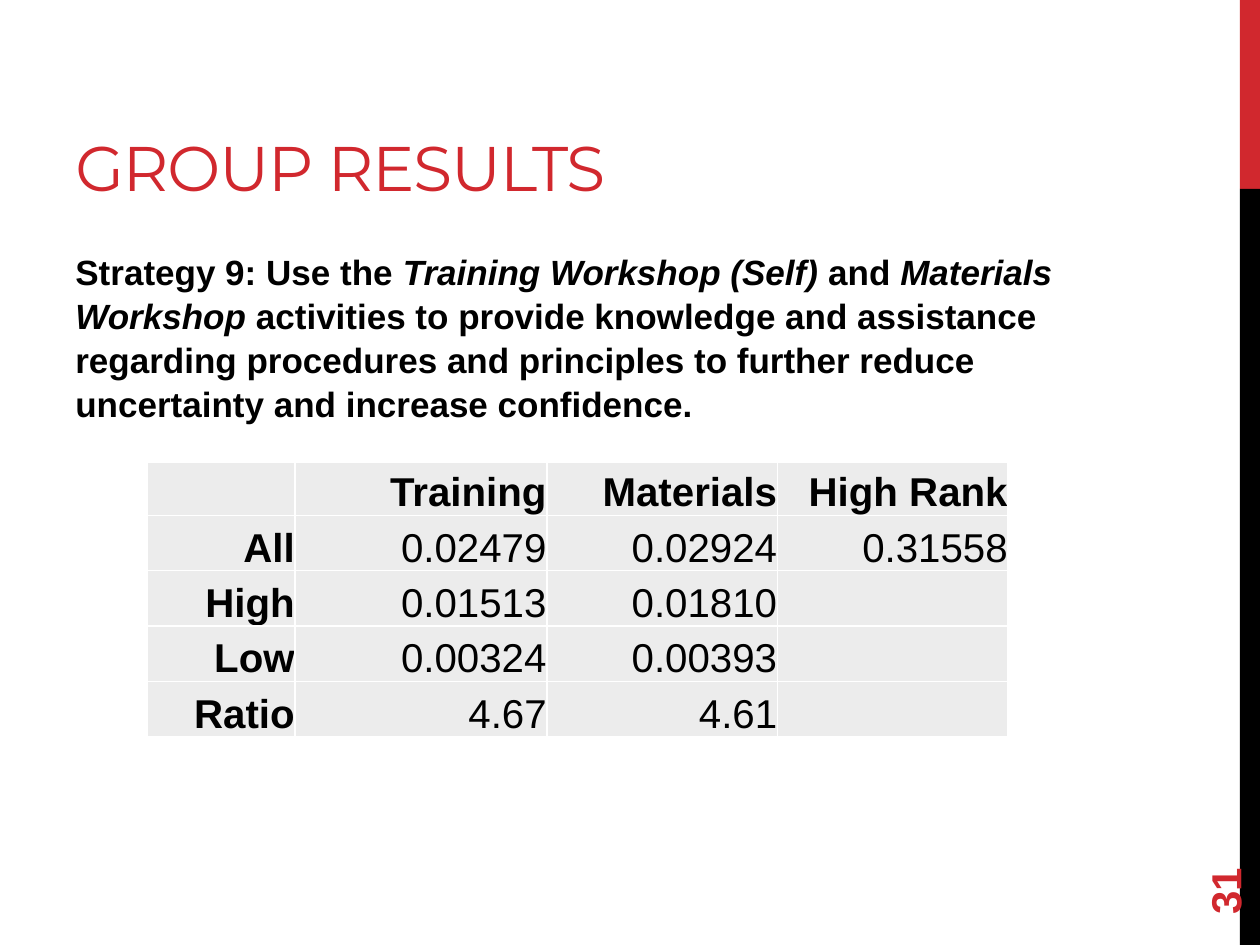
"""Build the group results slide for Strategy 9."""
from lxml import etree
from pptx import Presentation
from pptx.dml.color import RGBColor
from pptx.enum import shapes, text
from pptx.oxml.ns import qn
from pptx.util import Inches, Pt

RED, BLACK, WHITE, GRAY = "D1282E", "000000", "FFFFFF", "ECECEC"


def color(hex_value):
    return RGBColor.from_string(hex_value)


def add_run(paragraph, words, size, ink, font="Arial", bold=False, italic=False):
    run = paragraph.add_run()
    run.text = words
    run.font.name, run.font.size = font, Pt(size)
    run.font.bold, run.font.italic = bold, italic
    run.font.color.rgb = color(ink)
    return run


deck = Presentation()
deck.slide_width, deck.slide_height = Inches(10), Inches(7.5)
slide = deck.slides.add_slide(deck.slide_layouts[6])

for top, height, fill in [(0, 1.5, RED), (1.5, 6, BLACK)]:
    band = slide.shapes.add_shape(
        shapes.MSO_SHAPE.RECTANGLE, Inches(9.84), Inches(top), Inches(0.16), Inches(height))
    band.shadow.inherit = False
    band.fill.solid()
    band.fill.fore_color.rgb = color(fill)
    band.line.fill.background()

frames = []
for left, top, width, height, anchor, angle in [
    (0.5, 0.17, 6.83, 1.5, text.MSO_ANCHOR.BOTTOM, 0),
    (9, 6.44, 1.44, 0.4, text.MSO_ANCHOR.MIDDLE, 270),
    (0.5, 1.92, 8.33, 4.92, text.MSO_ANCHOR.TOP, 0),
]:
    box = slide.shapes.add_textbox(Inches(left), Inches(top), Inches(width), Inches(height))
    box.rotation = angle
    box.text_frame.word_wrap = True
    box.text_frame.vertical_anchor = anchor
    frames.append(box.text_frame)
title, page_number, strategy = [frame.paragraphs[0] for frame in frames]

heading = add_run(title, "GROUP RESULTS", 36, RED, font="Montserrat")
heading.font._element.set("spc", "-60")
add_run(page_number, "31", 24, RED, bold=True)

strategy.line_spacing = 1.05
strategy.space_after = Pt(6)
for words, italic in [
    ("Strategy 9: Use the ", False),
    ("Training Workshop (Self) ", True),
    ("and ", False),
    ("Materials Workshop ", True),
    ("activities to provide knowledge and assistance regarding procedures and "
     "principles to further reduce uncertainty and increase confidence.", False),
]:
    add_run(strategy, words, 20, BLACK, bold=True, italic=italic)

results = [
    ["", "Training", "Materials", "High Rank"],
    ["All", "0.02479", "0.02924", "0.31558"],
    ["High", "0.01513", "0.01810", ""],
    ["Low", "0.00324", "0.00393", ""],
    ["Ratio", "4.67", "4.61", ""],
]
table = slide.shapes.add_table(
    5, 4, Inches(1.17), Inches(3.67), Inches(6.83), Inches(2.18)).table
for column, width in zip(table.columns, [1.17, 2, 1.83, 1.83]):
    column.width = Inches(width)
for row, height in zip(table.rows, [0.42] + [0.44] * 4):
    row.height = Inches(height)

for r, values in enumerate(results):
    for c, value in enumerate(values):
        cell = table.cell(r, c)
        cell.margin_left = cell.margin_right = cell.margin_top = cell.margin_bottom = 0
        cell.vertical_anchor = text.MSO_ANCHOR.BOTTOM
        entry = cell.text_frame.paragraphs[0]
        entry.alignment = text.PP_ALIGN.RIGHT
        if value:
            add_run(entry, value, 23, BLACK, bold=r == 0 or c == 0)
        properties = cell._tc.get_or_add_tcPr()
        for side in ["a:lnL", "a:lnR", "a:lnT", "a:lnB"]:
            border = etree.SubElement(properties, qn(side), w=str(Pt(1)))
            paint = etree.SubElement(border, qn("a:solidFill"))
            etree.SubElement(paint, qn("a:srgbClr"), val=WHITE)
        cell.fill.solid()
        cell.fill.fore_color.rgb = color(GRAY)

deck.save("out.pptx")
